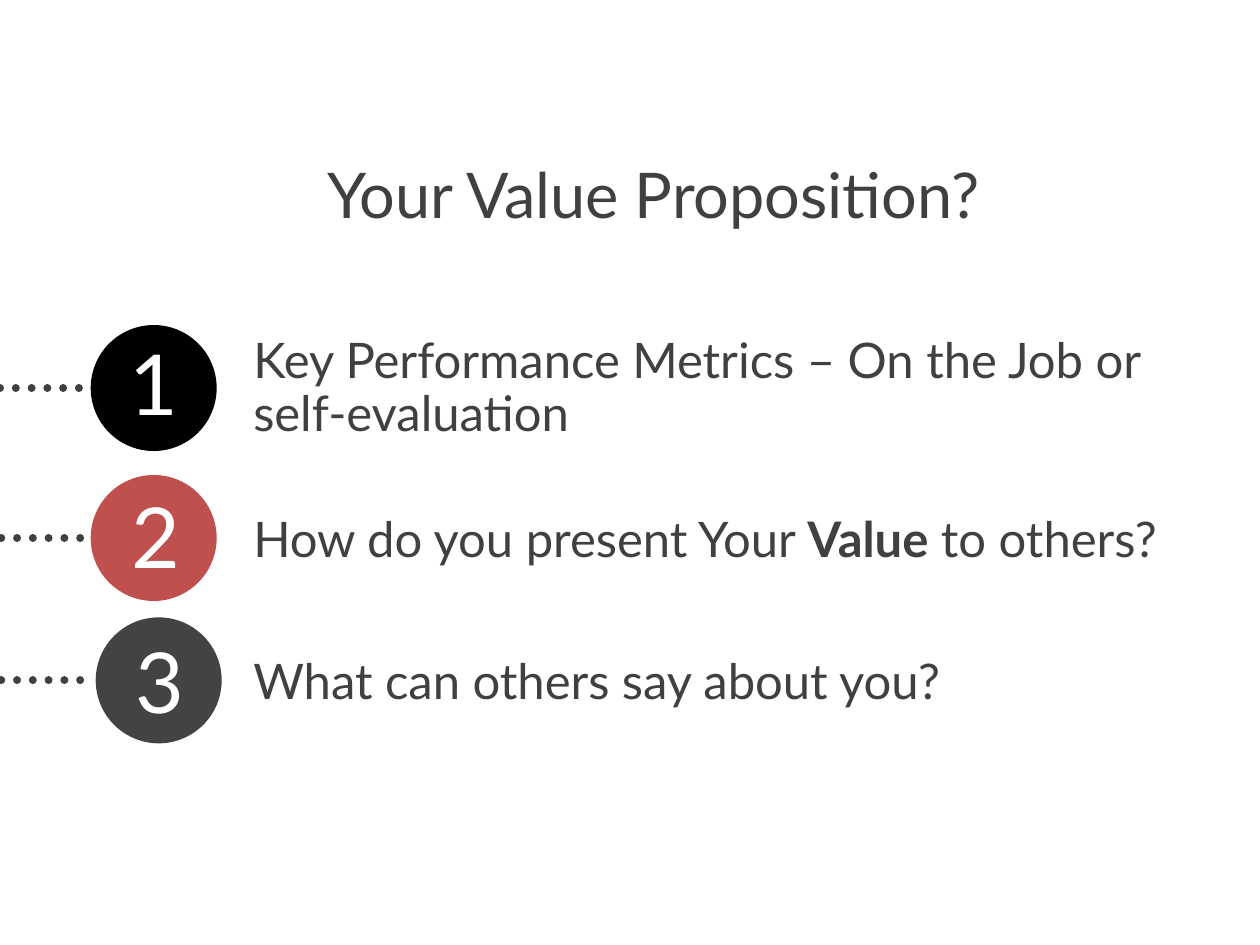
import pptx
import pptx.dml.color
import pptx.enum.dml
import pptx.enum.shapes
import pptx.enum.text
import pptx.util
from lxml import etree

WIDTH, HEIGHT = 10, 7.5
FONT = "Lato"
GREY, WHITE = "404040", "FFFFFF"
CIRCLE = 1
ROWS = [
    {"number": "1", "fill": "000000", "circle": (0.72, 2.58), "digit": (0.68, 2.58),
     "line": 0, "text_top": 2.75,
     "words": [("Key Performance Metrics – On the Job or self-evaluation", False)]},
    {"number": "2", "fill": "C0504D", "circle": (0.72, 3.77), "digit": (0.7, 3.8),
     "line": 0.01, "text_top": 3.96,
     "words": [("How do you present Your ", False), ("Value", True), (" to others?", False)]},
    {"number": "3", "fill": "434343", "circle": (0.76, 4.9), "digit": (0.73, 4.95),
     "line": 0.01, "text_top": 5.09,
     "words": [("What can others say about you?", False)]},
]


def color(value):
    return pptx.dml.color.RGBColor.from_string(value)


def inches(*values):
    return [pptx.util.Inches(value) for value in values]


def style(font, size, value, bold=False):
    font.name = FONT
    font.size = pptx.util.Pt(size)
    font.color.rgb = color(value)
    font.bold = bold


def add_title(page, text):
    title = page.shapes.title
    title.left, title.top, title.width, title.height = inches(2.5, 1.25, 6.67, 1.02)
    frame = title.text_frame
    frame.text = text
    frame.word_wrap = True
    frame.vertical_anchor = pptx.enum.text.MSO_ANCHOR.TOP
    para = frame.paragraphs[0]
    para.alignment = pptx.enum.text.PP_ALIGN.LEFT
    para.line_spacing = 0.9
    para.space_before = pptx.util.Pt(0)
    style(para.runs[0].font, 36, GREY)


def add_dotted_line(page, left, middle):
    line = page.shapes.add_connector(
        pptx.enum.shapes.MSO_CONNECTOR.STRAIGHT, *inches(left, middle, left + 0.75, middle))
    line.line.color.rgb = color(GREY)
    line.line.width = pptx.util.Pt(4.5)
    line.line.dash_style = pptx.enum.dml.MSO_LINE.ROUND_DOT
    line.line._get_or_add_ln().set("cap", "rnd")
    properties = line._element.spPr
    namespace = properties.nsmap["a"]
    etree.SubElement(properties, f"{{{namespace}}}effectLst")


def add_circle(page, left, top, fill):
    circle = page.shapes.add_shape(
        pptx.enum.shapes.MSO_SHAPE.OVAL, *inches(left, top, CIRCLE, CIRCLE))
    circle.shadow.inherit = False
    circle.fill.solid()
    circle.fill.fore_color.rgb = color(fill)
    circle.line.fill.background()


def add_digit(page, left, top, number):
    frame = page.shapes.add_textbox(*inches(left, top, 1.08, 0.91)).text_frame
    frame.text = number
    frame.word_wrap = True
    frame.auto_size = pptx.enum.text.MSO_AUTO_SIZE.SHAPE_TO_FIT_TEXT
    para = frame.paragraphs[0]
    para.alignment = pptx.enum.text.PP_ALIGN.CENTER
    style(para.runs[0].font, 48, WHITE)


def add_statement(page, top, words):
    frame = page.shapes.add_textbox(*inches(1.97, top, 7.31, 0.63)).text_frame
    frame.word_wrap = True
    frame.vertical_anchor = pptx.enum.text.MSO_ANCHOR.MIDDLE
    frame.margin_left = frame.margin_right = frame.margin_top = pptx.util.Inches(0.04)
    frame.margin_bottom = 0
    para = frame.paragraphs[0]
    para.line_spacing = 0.9
    for text, bold in words:
        span = para.add_run()
        span.text = text
        style(span.font, 28, GREY, bold)


def add_row(page, row):
    left, top = row["circle"]
    add_dotted_line(page, row["line"], top + CIRCLE / 2)
    add_circle(page, left, top, row["fill"])
    add_digit(page, *row["digit"], row["number"])
    add_statement(page, row["text_top"], row["words"])


def main():
    deck = pptx.Presentation()
    deck.slide_width, deck.slide_height = inches(WIDTH, HEIGHT)
    page = deck.slides.add_slide(deck.slide_layouts[5])
    page.background.fill.solid()
    page.background.fill.fore_color.rgb = color(WHITE)
    add_title(page, "Your Value Proposition?")
    for row in ROWS:
        add_row(page, row)
    deck.save("out.pptx")


if __name__ == "__main__":
    main()
